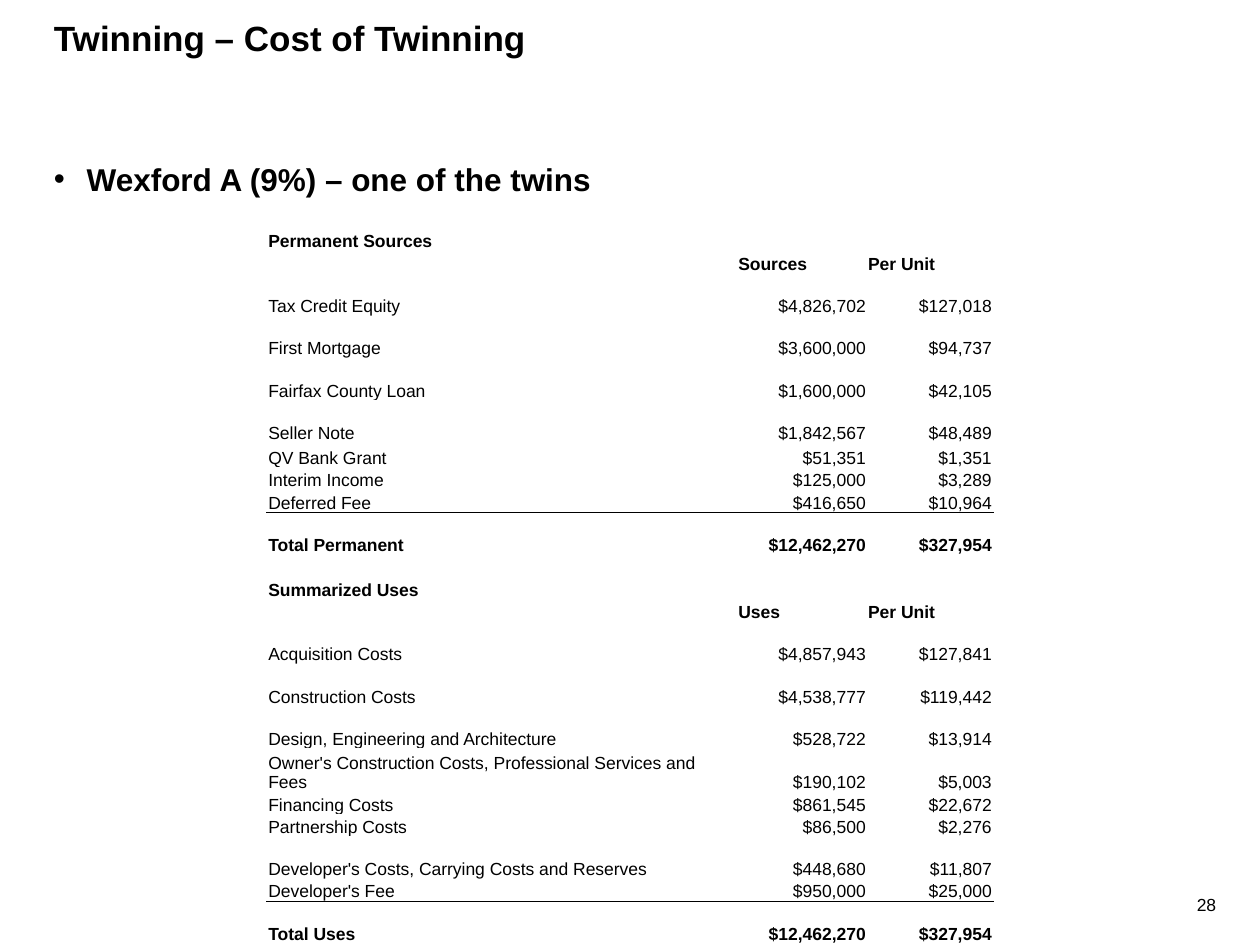
from lxml import etree
from pptx import Presentation
from pptx.dml.color import RGBColor
from pptx.enum.text import MSO_ANCHOR, PP_ALIGN
from pptx.oxml.ns import qn
from pptx.util import Inches, Pt

BLACK = RGBColor(0, 0, 0)
FONT = "Arial"
LEFT, RIGHT, BOTTOM = PP_ALIGN.LEFT, PP_ALIGN.RIGHT, MSO_ANCHOR.BOTTOM

# Content: row kind, row height in points, cells
LOW, MID, TALL = 12.6, 14.3, 24.2
ROWS = [
    ("head", LOW, ("Permanent Sources", "", "")),
    ("head", LOW, ("", "Sources", "Per Unit")),
    ("item", TALL, ("Tax Credit Equity", "$4,826,702", "$127,018")),
    ("item", TALL, ("First Mortgage", "$3,600,000", "$94,737")),
    ("item", TALL, ("Fairfax County Loan", "$1,600,000", "$42,105")),
    ("item", TALL, ("Seller Note", "$1,842,567", "$48,489")),
    ("item", MID, ("QV Bank Grant", "$51,351", "$1,351")),
    ("item", LOW, ("Interim Income", "$125,000", "$3,289")),
    ("last", LOW, ("Deferred Fee", "$416,650", "$10,964")),
    ("total", TALL, ("Total Permanent", "$12,462,270", "$327,954")),
    ("item", LOW, ("", "", "")),
    ("head", LOW, ("Summarized Uses", "", "")),
    ("head", LOW, ("", "Uses", "Per Unit")),
    ("item", TALL, ("Acquisition Costs", "$4,857,943", "$127,841")),
    ("item", TALL, ("Construction Costs", "$4,538,777", "$119,442")),
    ("item", TALL, ("Design, Engineering and Architecture", "$528,722", "$13,914")),
    ("item", TALL, ("Owner's Construction Costs, Professional Services and Fees",
                    "$190,102", "$5,003")),
    ("item", LOW, ("Financing Costs", "$861,545", "$22,672")),
    ("item", LOW, ("Partnership Costs", "$86,500", "$2,276")),
    ("item", TALL, ("Developer's Costs, Carrying Costs and Reserves",
                    "$448,680", "$11,807")),
    ("last", LOW, ("Developer's Fee", "$950,000", "$25,000")),
    ("total", TALL, ("Total Uses", "$12,462,270", "$327,954")),
]
COL_WIDTHS = (3.73, 1.03, 1)
RULES = {"last": "a:lnB", "total": "a:lnT"}


def style(p, size, bold=False, align=LEFT):
    p.alignment = align
    p.font.name, p.font.size, p.font.bold = FONT, Pt(size), bold
    p.font.color.rgb = BLACK


def add_text(s, box, text, size, bold=False, align=LEFT):
    tf = s.shapes.add_textbox(*map(Inches, box)).text_frame
    tf.word_wrap = True
    p = tf.paragraphs[0]
    p.text = text
    style(p, size, bold, align)
    return p


def add_bullet(p, indent):
    pPr = p._p.get_or_add_pPr()
    pPr.set("marL", str(Inches(indent)))
    pPr.set("indent", str(-Inches(indent)))
    for bullet in (etree.Element(qn("a:buFont"), typeface=FONT),
                   etree.Element(qn("a:buChar"), char="•")):
        pPr.insert_element_before(bullet, "a:tabLst", "a:defRPr", "a:extLst")


def add_rule(cell, side):
    ln = etree.SubElement(cell._tc.get_or_add_tcPr(), qn(side), w=str(Pt(0.5)))
    fill = etree.SubElement(ln, qn("a:solidFill"))
    etree.SubElement(fill, qn("a:srgbClr"), val=str(BLACK))


def fill_cell(cell, text, kind, col):
    if kind in RULES:
        add_rule(cell, RULES[kind])
    cell.fill.background()
    cell.vertical_anchor = BOTTOM
    cell.margin_left = cell.margin_right = cell.margin_top = Inches(0.01)
    cell.margin_bottom = 0
    p = cell.text_frame.paragraphs[0]
    p.text = text
    style(p, 10, kind in ("head", "total"), RIGHT if col and kind != "head" else LEFT)
    if not text:  # keeps an empty row from growing
        etree.SubElement(p._p, qn("a:endParaRPr"), sz="1000")


prs = Presentation()
prs.slide_width, prs.slide_height = Inches(10), Inches(7.5)
s = prs.slides.add_slide(prs.slide_layouts[6])

# Page number, title and bullet
add_text(s, (9.3, 7.05, 0.45, 0.27), "28", 10, align=RIGHT)
add_text(s, (0.33, 0.08, 9.33, 0.77), "Twinning – Cost of Twinning", 20, True)
p = add_text(s, (0.33, 1.16, 9.33, 5.43), "Wexford A (9%) – one of the twins", 18, True)
p.line_spacing = 1.2
add_bullet(p, 0.26)

# Sources and uses table
height = sum(h for _, h, _ in ROWS)
table = s.shapes.add_table(len(ROWS), len(COL_WIDTHS), Inches(2.12), Inches(1.82),
                           Inches(sum(COL_WIDTHS)), Pt(height)).table
table.first_row = table.horz_banding = False
for column, width in zip(table.columns, COL_WIDTHS):
    column.width = Inches(width)
for row, (kind, row_height, texts) in zip(table.rows, ROWS):
    row.height = Pt(row_height)
    for col, text in enumerate(texts):
        fill_cell(row.cells[col], text, kind, col)

prs.save("out.pptx")
